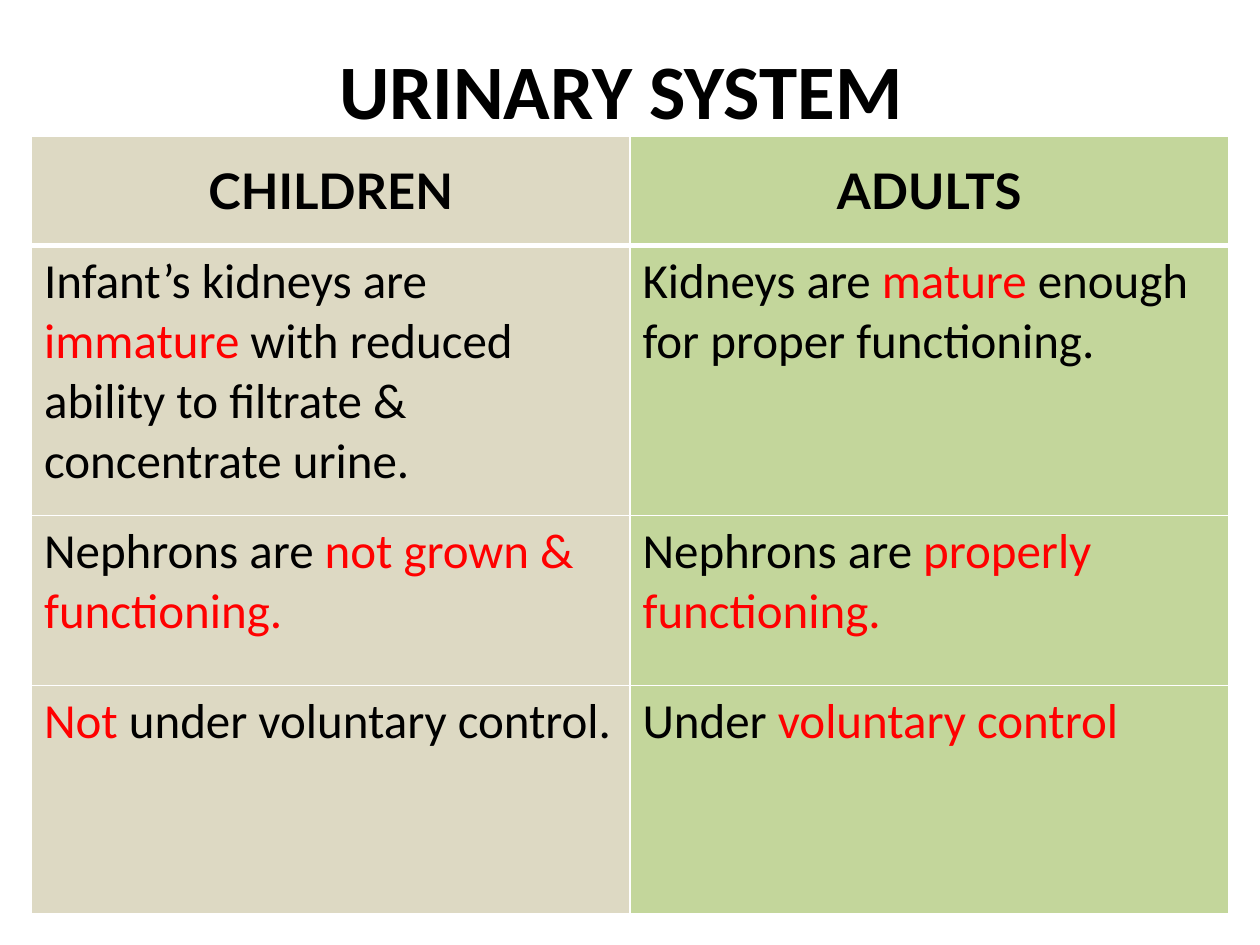
from pptx import Presentation
from pptx.dml.color import RGBColor
from pptx.enum.text import MSO_ANCHOR as Anchor, PP_ALIGN as Align
from pptx.oxml import parse_xml
from pptx.oxml.ns import nsdecls
from pptx.util import Inches, Pt

BLACK, RED, WHITE = "000000", "FF0000", "FFFFFF"


def color(value):
    return RGBColor.from_string(value)


def add_run(paragraph, text, size, font_name, bold, value):
    run = paragraph.add_run()
    run.text = text
    run.font.size = Pt(size)
    run.font.name = font_name
    run.font.bold = bold
    run.font.color.rgb = color(value)


presentation = Presentation()
presentation.slide_width = Inches(10)
presentation.slide_height = Inches(7.5)
slide = presentation.slides.add_slide(presentation.slide_layouts[6])

title = slide.shapes.add_textbox(Inches(0.5), Inches(0.08), Inches(9), Inches(1.25))
title.text_frame.word_wrap = True
title.text_frame.vertical_anchor = Anchor.MIDDLE
paragraph = title.text_frame.paragraphs[0]
paragraph.alignment = Align.CENTER
add_run(paragraph, "URINARY SYSTEM ", 44, "Calibri", True, BLACK)

column_fills = ["DDD9C3", "C3D69B"]
row_heights = [0.87, 2.14, 1.35, 1.81]
comparison = [
    [[("CHILDREN", BLACK)], [("ADULTS", BLACK)]],
    [
        [
            ("Infant’s kidneys are ", BLACK),
            ("immature", RED),
            (" with reduced ability to filtrate & concentrate urine.", BLACK),
        ],
        [
            ("Kidneys are ", BLACK),
            ("mature", RED),
            (" enough for proper functioning.", BLACK),
        ],
    ],
    [
        [("Nephrons are ", BLACK), ("not grown & functioning.", RED)],
        [("Nephrons are ", BLACK), ("properly functioning.", RED)],
    ],
    [
        [("Not", RED), (" under voluntary control.", BLACK)],
        [("Under ", BLACK), ("voluntary control", RED)],
    ],
]

table = slide.shapes.add_table(
    len(comparison), len(column_fills),
    Inches(0.25), Inches(1.08), Inches(9.5), Inches(sum(row_heights)),
).table
for column in table.columns:
    column.width = Inches(4.75)

for row_index, (height, row_texts) in enumerate(zip(row_heights, comparison)):
    table.rows[row_index].height = Inches(height)
    is_header = row_index == 0
    border_widths = {
        "lnL": 1,
        "lnR": 1,
        "lnT": 3 if row_index == 1 else 1,
        "lnB": 3 if is_header else 1,
    }
    for column_index, pieces in enumerate(row_texts):
        cell = table.cell(row_index, column_index)
        cell.vertical_anchor = Anchor.MIDDLE if is_header else Anchor.TOP
        properties = cell._tc.get_or_add_tcPr()
        for side, width in border_widths.items():
            properties.append(parse_xml(
                f'<a:{side} {nsdecls("a")} w="{Pt(width)}"><a:solidFill>'
                f'<a:srgbClr val="{WHITE}"/></a:solidFill></a:{side}>'
            ))
        cell.fill.solid()
        cell.fill.fore_color.rgb = color(column_fills[column_index])
        paragraph = cell.text_frame.paragraphs[0]
        paragraph.alignment = Align.CENTER if is_header else Align.LEFT
        font_name = "Lato" if is_header else "Calibri"
        for text, value in pieces:
            add_run(paragraph, text, 28, font_name, is_header, value)

presentation.save("out.pptx")
